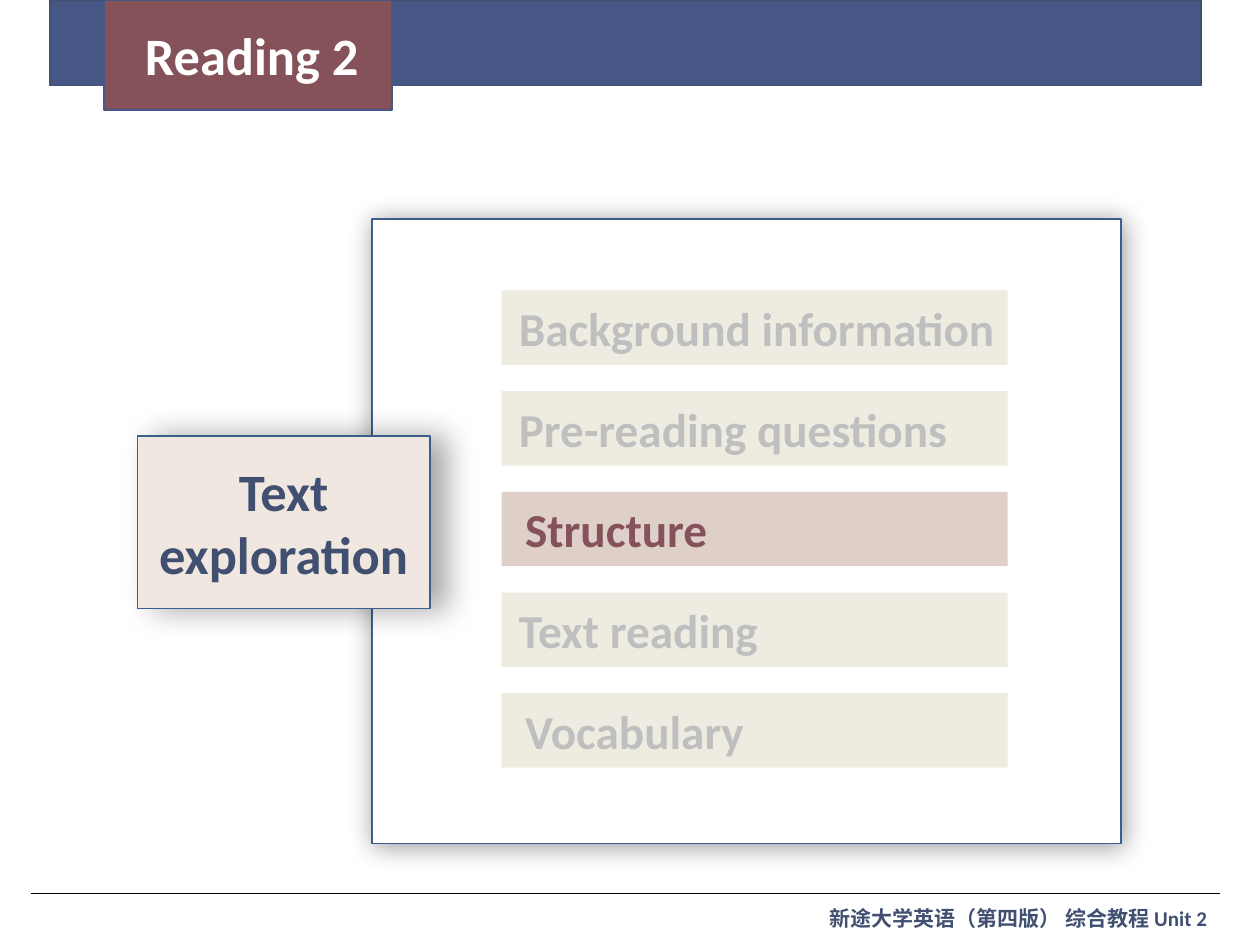
from dataclasses import dataclass

from lxml import etree
from pptx import Presentation
from pptx.dml.color import RGBColor
from pptx.enum.shapes import MSO_CONNECTOR, MSO_SHAPE
from pptx.enum.text import MSO_ANCHOR, MSO_AUTO_SIZE, PP_ALIGN
from pptx.oxml.ns import qn
from pptx.util import Cm, Pt

RECT = MSO_SHAPE.RECTANGLE
STRAIGHT = MSO_CONNECTOR.STRAIGHT
TOP, MIDDLE = MSO_ANCHOR.TOP, MSO_ANCHOR.MIDDLE
LEFT, CENTER = PP_ALIGN.LEFT, PP_ALIGN.CENTER
NO_FIT = MSO_AUTO_SIZE.NONE


@dataclass(frozen=True)
class Theme:
    navy: str = "415070"
    blue: str = "465685"
    edge: str = "3A5F8C"
    wine: str = "855259"
    rose: str = "DECFC9"
    cream: str = "F0E7E1"
    sand: str = "EEECE1"
    gray: str = "BFBFBF"
    white: str = "FFFFFF"
    black: str = "000000"
    font: str = "Calibri"
    foot_font: str = "Arial"
    head_size: int = 60
    item_size: int = 54
    foot_size: int = 24


THEME = Theme()
ITEMS = ("Background information", "Pre-reading questions", "Structure",
         "Text reading", "Vocabulary")
ACTIVE = "Structure"
DEEP = ("Structure", "Vocabulary")  # items set further in
ROW_TOP, ROW_STEP = 11.71, 4.06


def place(shape, box):
    shape.left, shape.top, shape.width, shape.height = map(Cm, box)


def style(font, size, color, face=THEME.font):
    font.name, font.size, font.bold = face, Pt(size), True
    font.color.rgb = RGBColor.from_string(color)


def write(shape, text, size, color, align=LEFT, anchor=MIDDLE, inset=0.25):
    frame = shape.text_frame
    frame.text = text
    frame.word_wrap, frame.auto_size = True, NO_FIT
    frame.vertical_anchor = anchor
    frame.margin_left, frame.margin_right = Cm(inset), Cm(0.25)
    frame.margin_top = frame.margin_bottom = Cm(0.13)
    para = frame.paragraphs[0]
    para.alignment = align
    style(para.font, size, color)


def add_box(slide, box, fill, line=None):
    shape = slide.shapes.add_shape(RECT, *map(Cm, box))
    shape.shadow.inherit = False
    shape.fill.solid()
    shape.fill.fore_color.rgb = RGBColor.from_string(fill)
    if line:
        shape.line.color.rgb = RGBColor.from_string(line)
        shape.line.width = Pt(2)
    else:
        shape.line.fill.background()
    return shape


def cast(shape, alpha, blur, dist, angle):
    """Give the shape a soft outer shadow: percent, points, points, degrees."""
    effects = shape._element.spPr.find(qn("a:effectLst"))
    shadow = etree.SubElement(
        effects, qn("a:outerShdw"), blurRad=str(Pt(blur)), dist=str(Pt(dist)),
        dir=str(angle * 60000), algn="ctr", rotWithShape="0")
    color = etree.SubElement(shadow, qn("a:srgbClr"), val=THEME.black)
    etree.SubElement(color, qn("a:alpha"), val=str(alpha * 1000))


def add_footer(slide):
    rule = slide.shapes.add_connector(
        STRAIGHT, Cm(1.24), Cm(36), Cm(49.17), Cm(36))
    rule.line.color.rgb = RGBColor.from_string(THEME.black)
    rule.line.width = Pt(0.75)
    etree.SubElement(rule._element.spPr, qn("a:effectLst"))
    note = slide.shapes.add_textbox(*map(Cm, (33.2, 36.37, 17.5, 1.27)))
    note.text_frame.word_wrap = True
    para = note.text_frame.paragraphs[0]
    for text, face in (("新途大学英语（第四版） 综合教程 ", THEME.foot_font),
                       ("Unit 2", THEME.font)):
        run = para.add_run()
        run.text = text
        style(run.font, THEME.foot_size, THEME.navy, face)


def add_header(slide):
    add_box(slide, (2.01, 0, 46.41, 3.45), THEME.blue, THEME.navy)
    add_box(slide, (4.19, 0, 11.61, 4.45), THEME.wine, THEME.blue)
    title = slide.shapes.title
    place(title, (5.59, 0.81, 11.61, 2.82))
    write(title, "Reading 2", THEME.head_size, THEME.white, anchor=TOP)
    slide.shapes._spTree.append(title._element)  # bring in front of the tab


def add_panel(slide):
    panel = add_box(slide, (15.01, 8.84, 30.2, 25.17), THEME.white, THEME.edge)
    cast(panel, 40, 29, 3, 45)
    card = add_box(slide, (5.54, 17.58, 11.79, 6.96), THEME.cream, THEME.edge)
    cast(card, 34, 35, 18, 0)
    write(card, "Text exploration", THEME.head_size, THEME.navy, CENTER)


def add_items(slide):
    for row, text in enumerate(ITEMS):
        live = text == ACTIVE
        box = (20.23, ROW_TOP + row * ROW_STEP, 20.4, 3)
        item = add_box(slide, box, THEME.rose if live else THEME.sand)
        write(item, text, THEME.item_size, THEME.wine if live else THEME.gray,
              inset=0.94 if text in DEEP else 0.69)


def main():
    deck = Presentation()
    deck.slide_width, deck.slide_height = Cm(50.8), Cm(38.1)
    slide = deck.slides.add_slide(deck.slide_layouts[5])
    add_footer(slide)
    add_header(slide)
    add_panel(slide)
    add_items(slide)
    deck.save("out.pptx")


if __name__ == "__main__":
    main()
